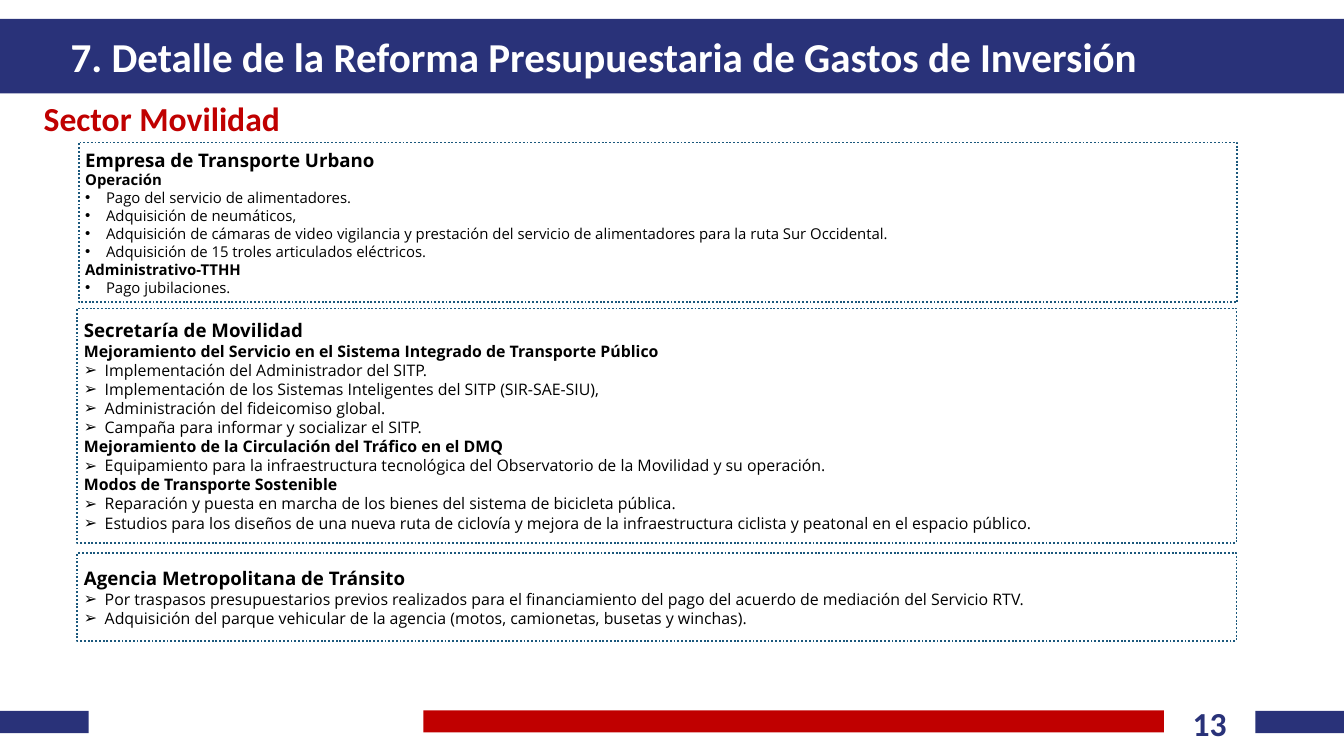
from lxml import etree
from pptx import Presentation
from pptx.dml.color import RGBColor
from pptx.enum.dml import MSO_LINE
from pptx.enum.shapes import MSO_SHAPE
from pptx.enum.text import MSO_ANCHOR, MSO_AUTO_SIZE, PP_ALIGN
from pptx.oxml.ns import qn
from pptx.util import Inches, Pt

COLORS = {"navy": "293279", "red": "C00000", "border": "1B587C",
          "text": "000000", "white": "FFFFFF"}
TITLE_FONT = "Calibri"
BODY_FONT = "Open Sans"
INDENT = Inches(0.31)

# Each sector: box, bullet, text size, heading, then (subheading, items) groups
SECTORS = [
    ((1.17, 2.12, 17.24, 2.38), "•", 16, "Empresa de Transporte Urbano", [
        ("Operación", [
            "Pago del servicio de alimentadores.",
            "Adquisición de neumáticos,",
            "Adquisición de cámaras de video vigilancia y prestación del servicio "
            "de alimentadores para la ruta Sur Occidental.",
            "Adquisición de 15 troles articulados eléctricos."]),
        ("Administrativo-TTHH", ["Pago jubilaciones."]),
    ]),
    ((1.15, 4.59, 17.25, 3.49), "➢", 17, "Secretaría de Movilidad", [
        ("Mejoramiento del Servicio en el Sistema Integrado de Transporte Público", [
            "Implementación del Administrador del SITP.",
            "Implementación de los Sistemas Inteligentes del SITP (SIR-SAE-SIU),",
            "Administración del fideicomiso global.",
            "Campaña para informar y socializar el SITP."]),
        ("Mejoramiento de la Circulación del Tráfico en el DMQ", [
            "Equipamiento para la infraestructura tecnológica del Observatorio "
            "de la Movilidad y su operación."]),
        ("Modos de Transporte Sostenible", [
            "Reparación y puesta en marcha de los bienes del sistema de bicicleta pública.",
            "Estudios para los diseños de una nueva ruta de ciclovía y mejora de la "
            "infraestructura ciclista y peatonal en el espacio público."]),
    ]),
    ((1.15, 8.23, 17.25, 1.31), "➢", 17, "Agencia Metropolitana de Tránsito", [
        (None, [
            "Por traspasos presupuestarios previos realizados para el financiamiento "
            "del pago del acuerdo de mediación del Servicio RTV.",
            "Adquisición del parque vehicular de la agencia (motos, camionetas, "
            "busetas y winchas)."]),
    ]),
]


def rgb(name):
    return RGBColor.from_string(COLORS[name])


def format_font(font, name, size, color, bold):
    font.name = name
    font.size = Pt(size)
    font.color.rgb = rgb(color)
    font.bold = bold


def add_rectangle(slide, box):
    shape = slide.shapes.add_shape(MSO_SHAPE.RECTANGLE, *map(Inches, box))
    shape.shadow.inherit = False
    return shape


def add_bar(slide, box, color):
    bar = add_rectangle(slide, box)
    bar.fill.solid()
    bar.fill.fore_color.rgb = rgb(color)
    bar.line.fill.background()


def fill_label(shape, text, size, color, align=PP_ALIGN.LEFT, inset=(0.18, 0.09)):
    frame = shape.text_frame
    frame.text = text
    frame.word_wrap = True
    frame.auto_size = MSO_AUTO_SIZE.NONE
    frame.vertical_anchor = MSO_ANCHOR.MIDDLE
    frame.margin_left = frame.margin_right = Inches(inset[0])
    frame.margin_top = frame.margin_bottom = Inches(inset[1])
    paragraph = frame.paragraphs[0]
    paragraph.alignment = align
    format_font(paragraph.runs[0].font, TITLE_FONT, size, color, True)


def add_label(slide, box, *label, **options):
    fill_label(slide.shapes.add_textbox(*map(Inches, box)), *label, **options)


def add_header(slide, box):
    left, top, width, height = box
    add_bar(slide, box, "navy")
    title = slide.shapes.title
    title.left, title.top = Inches(left + 0.87), Inches(top)
    title.width, title.height = Inches(17.76), Inches(height)
    fill_label(title, "7. Detalle de la Reforma Presupuestaria de Gastos de Inversión",
               44, "white")
    # Bring the title in front of the band
    slide.shapes._spTree.append(title._element)
    add_label(slide, (left + 0.47, top + height + 0.02, 5.9, 0.68),
              "Sector Movilidad", 36, "red")


def add_footer(slide, box):
    left, top, width, height = box
    add_bar(slide, (left + 6.3, top - 0.01, 11.02, height), "red")
    for bar_left in (left, left + width - 1.32):
        add_bar(slide, (bar_left, top, 1.32, height), "navy")
    add_label(slide, (left + 17.32, top - 0.18, 1.36, 0.71), "13", 36, "navy",
              align=PP_ALIGN.CENTER, inset=(0.1, 0.05))


def add_bullet(paragraph, character):
    properties = paragraph._p.get_or_add_pPr()
    properties.set("marL", str(INDENT))
    properties.set("indent", str(-INDENT))
    etree.SubElement(properties, qn("a:buFont"), typeface="Arial")
    etree.SubElement(properties, qn("a:buChar"), char=character)


def add_sector(slide, box, bullet, size, heading, groups):
    panel = add_rectangle(slide, box)
    panel.fill.background()
    panel.line.color.rgb = rgb("border")
    panel.line.width = Pt(2)
    panel.line.dash_style = MSO_LINE.ROUND_DOT

    # Rows of text, size, bold and bullet
    rows = [(heading, 20, True, None)]
    for subheading, items in groups:
        if subheading:
            rows.append((subheading, size, True, None))
        rows += [(item, size, False, bullet) for item in items]

    frame = panel.text_frame
    frame.word_wrap = True
    frame.vertical_anchor = MSO_ANCHOR.MIDDLE
    frame.text = "\n".join(row[0] for row in rows)
    for paragraph, (_, text_size, bold, character) in zip(frame.paragraphs, rows):
        paragraph.alignment = PP_ALIGN.JUSTIFY
        if character:
            add_bullet(paragraph, character)
        format_font(paragraph.runs[0].font, BODY_FONT, text_size, "text", bold)


def main():
    presentation = Presentation()
    presentation.slide_width = Inches(20)
    presentation.slide_height = Inches(11.25)
    slide = presentation.slides.add_slide(presentation.slide_layouts[5])

    add_footer(slide, (0, 10.58, 20, 0.33))
    add_header(slide, (0, 0.28, 20, 1.11))
    for sector in SECTORS:
        add_sector(slide, *sector)

    presentation.save("out.pptx")


if __name__ == "__main__":
    main()
